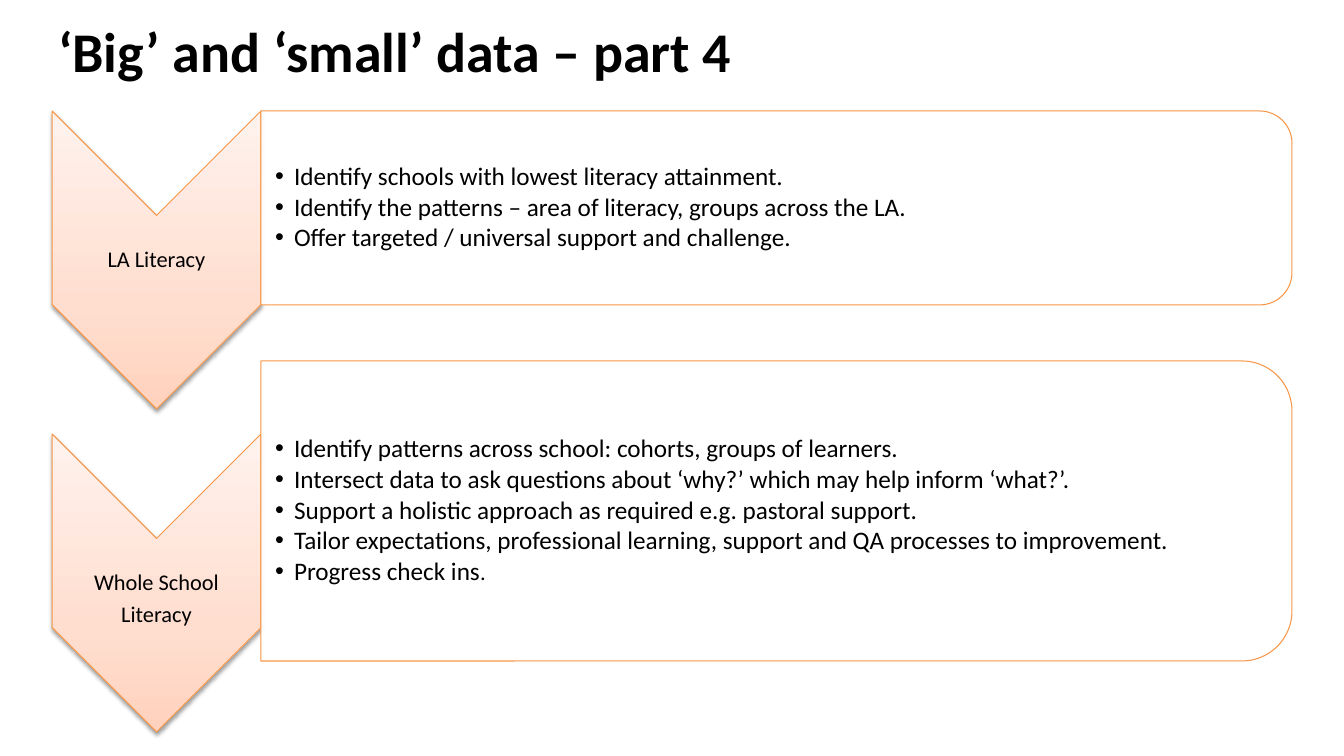
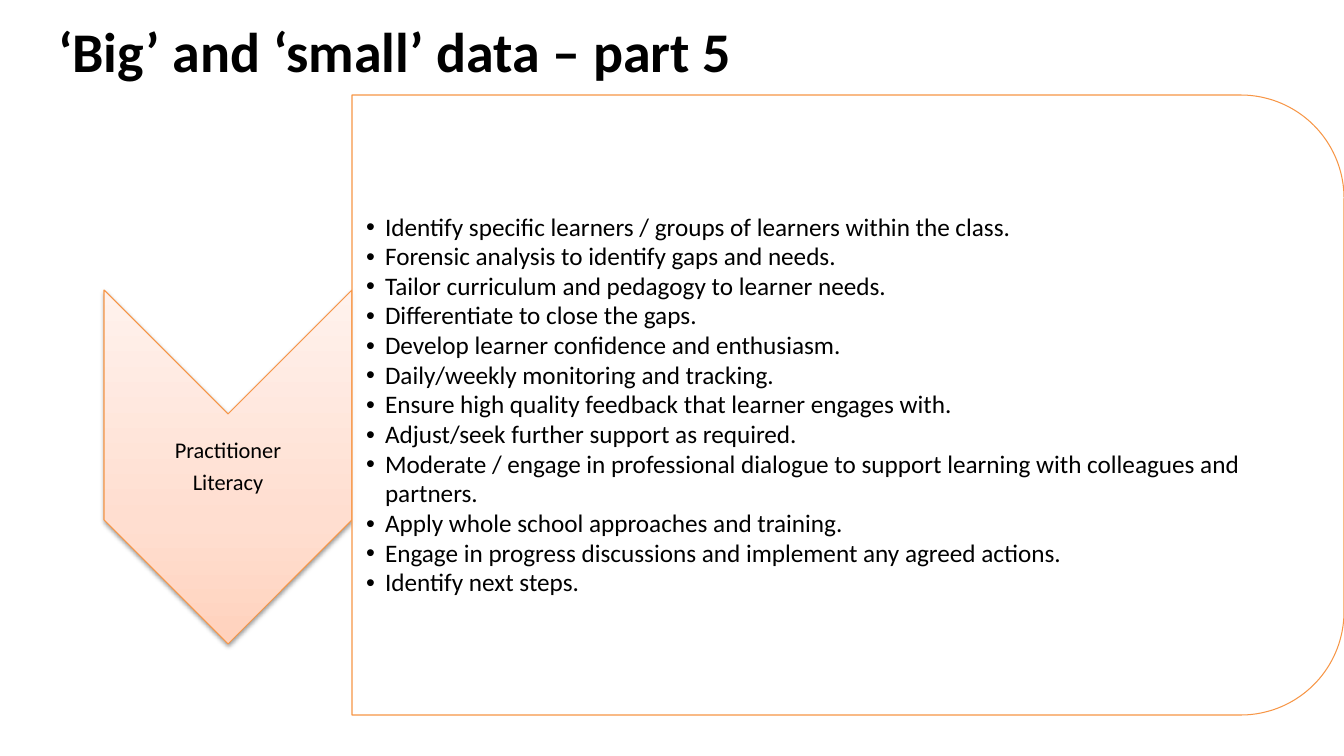
"""Builds two slides pairing downward chevrons with bulleted panels."""
from pptx import Presentation
from pptx import util as u
from pptx.dml.color import RGBColor
from pptx.enum import shapes, text
from pptx.oxml import parse_xml
from pptx.oxml.ns import nsdecls, qn

FONT = "Calibri"
BLACK = RGBColor(0x00, 0x00, 0x00)
WHITE = RGBColor(0xFF, 0xFF, 0xFF)
ORANGE = RGBColor(0xF7, 0x96, 0x46)
PEACH = RGBColor(0xFF, 0xD2, 0xBD)
PALE_PEACH = RGBColor(0xFF, 0xDE, 0xD0)
CREAM = RGBColor(0xFF, 0xF2, 0xED)
GRADIENT = ((0, PEACH), (35, PALE_PEACH), (100, CREAM))

SLIDE_SIZE = (1344, 756)
TITLE_BOX = (48, 23, 833, 54)
TWO_LISTS, ONE_LIST = 3, 1
BULLET_INDENT = 19


def px(length):
    """Turn px into EMU at 100.8 px to the inch."""
    return u.Emu(round(length * 914400 / 100.8))


def place(shape, box):
    """Move and size a shape to a px box."""
    shape.left, shape.top, shape.width, shape.height = map(px, box)


def format_paragraph(para, size, bold=False, line=None, after=0):
    """Set the font and spacing of one paragraph."""
    para.font.name, para.font.size = FONT, u.Pt(size)
    para.font.bold, para.font.color.rgb = bold, BLACK
    para.space_before, para.space_after = u.Pt(0), u.Pt(after)
    if line:
        para.line_spacing = line


def prepare_frame(frame, left=1, other=1):
    """Wrap and centre a text frame vertically, with px insets."""
    frame.word_wrap = True
    frame.auto_size = text.MSO_AUTO_SIZE.NONE
    frame.vertical_anchor = text.MSO_ANCHOR.MIDDLE
    frame.margin_left = px(left)
    frame.margin_top = frame.margin_right = frame.margin_bottom = px(other)


def add_titled_page(deck, layout, title):
    """Add a page with the shared title style."""
    page = deck.slides.add_slide(deck.slide_layouts[layout])
    heading = page.shapes.title
    place(heading, TITLE_BOX)
    prepare_frame(heading.text_frame, left=10, other=5)
    heading.text_frame.text = title
    para = heading.text_frame.paragraphs[0]
    para.alignment = text.PP_ALIGN.LEFT
    format_paragraph(para, 40, bold=True)
    return page


def add_turned_shape(page, preset, box):
    """Add an orange-lined preset turned a quarter so that it fills the box."""
    left, top, width, height = box
    shape = page.shapes.add_shape(preset, 0, 0, 0, 0)
    place(shape, (left + (width - height) / 2, top + (height - width) / 2, height, width))
    shape.rotation = 90
    shape.line.color.rgb = ORANGE
    shape.line.width = u.Pt(0.75)
    shape.shadow.inherit = False
    return shape


def add_chevron(page, box, lines, label_drop=0):
    """Draw a shaded downward chevron with a label between notch and shoulders."""
    left, top, width, height = box
    chevron = add_turned_shape(page, shapes.MSO_SHAPE.CHEVRON, box)
    props = chevron.element.spPr
    stops = "".join(
        f'<a:gs pos="{position * 1000}"><a:srgbClr val="{colour}"/></a:gs>'
        for position, colour in GRADIENT)
    props.find(qn("a:ln")).addprevious(parse_xml(
        f'<a:gradFill {nsdecls("a")} rotWithShape="0"><a:gsLst>{stops}</a:gsLst>'
        '<a:lin ang="16200000" scaled="0"/></a:gradFill>'))
    props.find(qn("a:effectLst")).append(parse_xml(
        f'<a:outerShdw {nsdecls("a")} blurRad="{u.Pt(3.1)}" dist="{u.Pt(1.6)}" '
        'dir="5400000" rotWithShape="0"><a:srgbClr val="000000">'
        '<a:alpha val="38000"/></a:srgbClr></a:outerShdw>'))

    label = page.shapes.add_textbox(0, 0, 0, 0)
    place(label, (left, top + width / 2 + label_drop, width, height - width))
    prepare_frame(label.text_frame)
    label.text_frame.text = "\n".join(lines)
    for para in label.text_frame.paragraphs:
        para.alignment = text.PP_ALIGN.CENTER
        format_paragraph(para, 16, line=0.9, after=5.5)


def add_list_panel(page, box, body, items, line, after=0):
    """Draw a panel rounded on the right and lay the body list over it."""
    left, top, width, height = box
    panel = add_turned_shape(page, shapes.MSO_SHAPE.ROUND_2_SAME_RECTANGLE, box)
    panel.fill.solid()
    panel.fill.fore_color.rgb = WHITE
    colour = panel.element.spPr.find(qn("a:solidFill")).find(qn("a:srgbClr"))
    colour.append(parse_xml(f'<a:alpha {nsdecls("a")} val="90000"/>'))

    place(body, (left, top, width - height * 0.05, height))
    body.element.getparent().append(body.element)
    prepare_frame(body.text_frame, left=14)
    body.text_frame.text = "\n".join(items)
    for para in body.text_frame.paragraphs:
        format_paragraph(para, 18, line=line, after=after)
        props = para._p.get_or_add_pPr()
        props.set("marL", str(px(BULLET_INDENT)))
        props.set("indent", str(-px(BULLET_INDENT)))


def build_authority_and_school(deck):
    """Build the page on the authority and the whole school."""
    page = add_titled_page(deck, TWO_LISTS, "‘Big’ and ‘small’ data – part 4")
    authority, school = page.placeholders[1], page.placeholders[2]
    add_chevron(page, (52, 111, 209, 298), ["LA Literacy"])
    add_list_panel(page, (261, 111, 1031, 194), authority, [
        "Identify schools with lowest literacy attainment.",
        "Identify the patterns – area of literacy, groups across the LA.",
        "Offer targeted / universal support and challenge.",
    ], line=0.9, after=2.5)
    add_chevron(page, (52, 434, 209, 298), ["Whole School", "Literacy"], label_drop=16)
    add_list_panel(page, (261, 361, 1031, 300), school, [
        "Identify patterns across school: cohorts, groups of learners.",
        "Intersect data to ask questions about ‘why?’ which may help inform ‘what?’.",
        "Support a holistic approach as required e.g. pastoral support.",
        "Tailor expectations, professional learning, support and QA processes to improvement.",
        "Progress check ins",
    ], line=0.9, after=2.5)
    span = school.text_frame.paragraphs[-1].add_run()
    span.text = "."
    span.font.size = u.Pt(16)


def build_practitioner(deck):
    """Build the page on the practitioner."""
    page = add_titled_page(deck, ONE_LIST, "‘Big’ and ‘small’ data – part 5")
    add_chevron(page, (104, 290, 248, 354), ["Practitioner", "Literacy"])
    add_list_panel(page, (352, 95, 992, 620), page.placeholders[1], [
        "Identify specific learners / groups of learners within the class.",
        "Forensic analysis to identify gaps and needs.",
        "Tailor curriculum and pedagogy to learner needs.",
        "Differentiate to close the gaps.",
        "Develop learner confidence and enthusiasm.",
        "Daily/weekly monitoring and tracking.",
        "Ensure high quality feedback that learner engages with.",
        "Adjust/seek further support as required.",
        "Moderate / engage in professional dialogue to support learning with colleagues and partners.",
        "Apply whole school approaches and training.",
        "Engage in progress discussions and implement any agreed actions.",
        "Identify next steps.",
    ], line=0.98)


def main():
    """Build and save the deck."""
    deck = Presentation()
    deck.slide_width, deck.slide_height = map(px, SLIDE_SIZE)
    build_authority_and_school(deck)
    build_practitioner(deck)
    deck.save("out.pptx")


if __name__ == "__main__":
    main()
